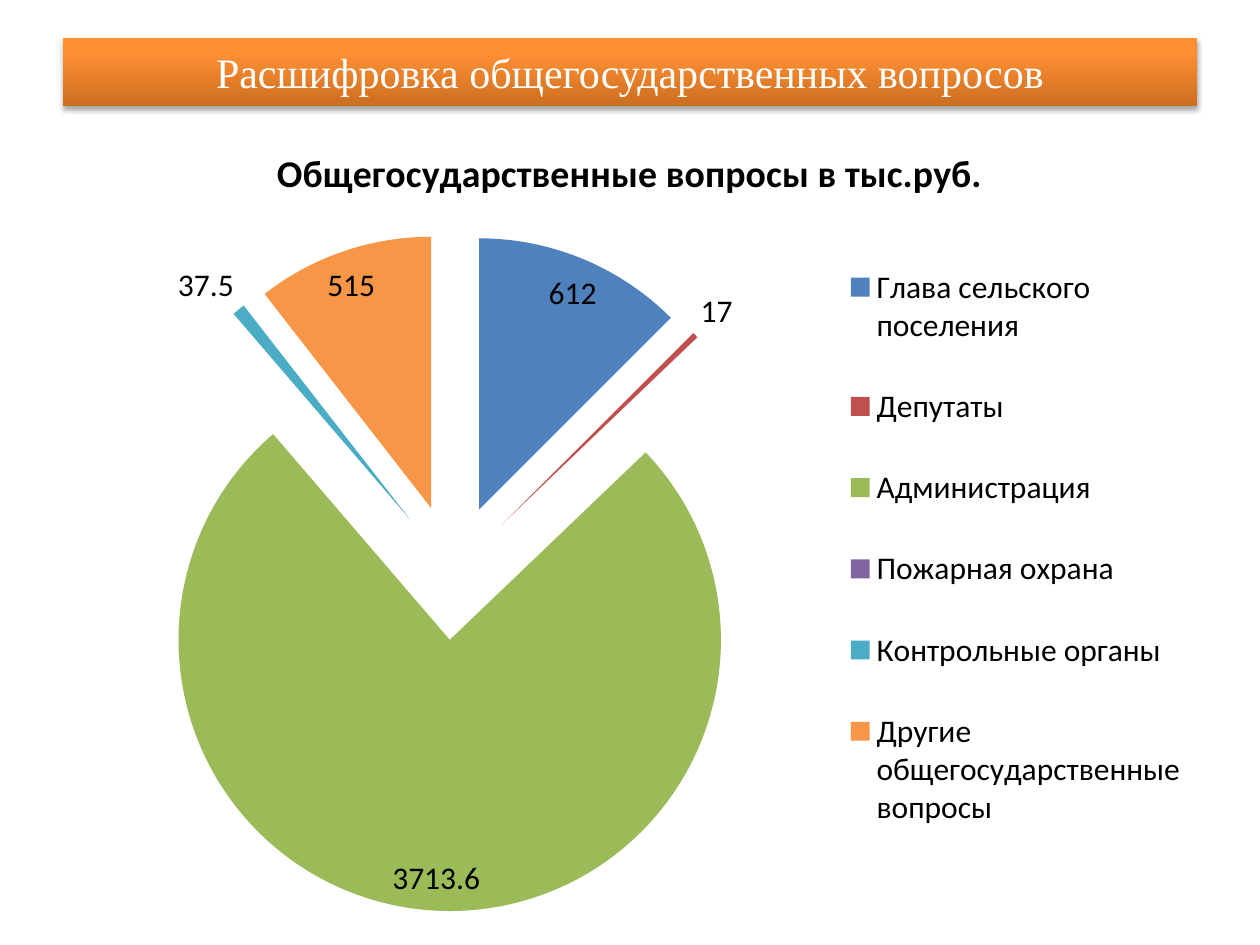
from lxml import etree
from pptx import Presentation
from pptx.chart.data import CategoryChartData
from pptx.dml.color import RGBColor
from pptx.enum.chart import XL_CHART_TYPE, XL_LABEL_POSITION, XL_LEGEND_POSITION
from pptx.enum.shapes import MSO_SHAPE
from pptx.enum.text import MSO_ANCHOR, PP_ALIGN
from pptx.oxml import parse_xml
from pptx.oxml.ns import nsdecls, qn
from pptx.util import Pt

PX = 914400 // 126
COLORS = {"dark": "CC6E20", "light": "FF9034", "white": "FFFFFF", "black": "000000"}
HEAD = "Общегосударственные вопросы в тыс.руб."
PARTS = [
    ("Глава сельского поселения", 612, "4F81BD"),
    ("Депутаты", 17, "C0504D"),
    ("Администрация", 3713.6, "9BBB59"),
    ("Пожарная охрана", 0, "8064A2"),
    ("Контрольные органы", 37.5, "4BACC6"),
    ("Другие общегосударственные вопросы", 515, "F79646"),
]
CHART = (63, 116, 1134, 814)
PIE = (114, 233, 678, 678)
KEYS = (840, 225, 352, 645)


def rgb(code):
    return RGBColor.from_string(code)


def scale(box):
    return [n * PX for n in box]


def style(font, size, color, name, bold=False):
    font.size, font.name, font.bold = Pt(size), name, bold
    font.color.rgb = rgb(color)


def add_shadow(shape):
    shape.shadow.inherit = False
    effects = shape._element.spPr.find(qn("a:effectLst"))
    effects.append(parse_xml(
        f'<a:outerShdw {nsdecls("a")} blurRad="39370" dist="22860" dir="5400000" '
        'rotWithShape="0"><a:srgbClr val="000000"><a:alpha val="35000"/>'
        '</a:srgbClr></a:outerShdw>'))


def add_banner(slide, box, text):
    shape = slide.shapes.add_shape(MSO_SHAPE.RECTANGLE, *scale(box))
    shape.line.fill.background()
    shape.fill.gradient()
    shape.fill.gradient_angle = 90
    for stop, color, place in zip(shape.fill.gradient_stops, ("dark", "light"), (0, 0.8)):
        stop.color.rgb = rgb(COLORS[color])
        stop.position = place
    add_shadow(shape)
    frame = shape.text_frame
    frame.word_wrap = True
    frame.vertical_anchor = MSO_ANCHOR.MIDDLE
    para = frame.paragraphs[0]
    para.text = text
    para.alignment = PP_ALIGN.CENTER
    style(para.font, 24, COLORS["white"], "Times New Roman")


def make_layout(box, inner=False):
    """Manual layout of a chart part, as shares of the chart box."""
    left, top, wide, high = CHART
    x, y, w, h = box
    shares = {"x": (x - left) / wide, "y": (y - top) / high, "w": w / wide, "h": h / high}
    layout = parse_xml(f'<c:layout {nsdecls("c")}><c:manualLayout/></c:layout>')
    rules = [("layoutTarget", "inner")] if inner else []
    rules += [("xMode", "edge"), ("yMode", "edge")]
    rules += [(key, f"{share:.3f}") for key, share in shares.items()]
    for tag, val in rules:
        etree.SubElement(layout[0], qn("c:" + tag)).set("val", val)
    return layout


def add_pie(slide):
    data = CategoryChartData()
    data.categories = [name for name, _, _ in PARTS]
    data.add_series(HEAD, [value for _, value, _ in PARTS])
    chart = slide.shapes.add_chart(XL_CHART_TYPE.PIE, *scale(CHART), data).chart
    style(chart.font, 18, COLORS["black"], "Calibri")

    # Heading
    chart.has_title = True
    para = chart.chart_title.text_frame.paragraphs[0]
    para.text = HEAD
    style(para.font, 21.6, COLORS["black"], "Calibri", True)

    # Slices, pulled apart
    plot = chart.plots[0]
    plot.vary_by_categories = True
    series = plot.series[0]
    for i, (_, _, color) in enumerate(PARTS):
        fill = series.points[i].format.fill
        fill.solid()
        fill.fore_color.rgb = rgb(color)
    burst = parse_xml(f'<c:explosion {nsdecls("c")} val="25"/>')
    series._element.find(qn("c:dPt")).addprevious(burst)

    # Values, with zero left blank
    plot.has_data_labels = True
    labels = plot.data_labels
    labels.show_value = True
    labels.show_percentage = False
    labels.number_format = "General;;"
    labels.number_format_is_linked = False
    labels.position = XL_LABEL_POSITION.BEST_FIT

    # Legend and places
    chart.has_legend = True
    legend = chart.legend
    legend.position = XL_LEGEND_POSITION.RIGHT
    legend.include_in_layout = False
    for old in legend._element.findall(qn("c:layout")):
        legend._element.remove(old)
    legend._element.find(qn("c:legendPos")).addnext(make_layout(KEYS))
    area = chart._chartSpace.chart.plotArea
    for old in area.findall(qn("c:layout")):
        area.remove(old)
    area.insert(0, make_layout(PIE, True))


def main():
    deck = Presentation()
    deck.slide_width, deck.slide_height = 1260 * PX, 945 * PX
    slide = deck.slides.add_slide(deck.slide_layouts[6])
    add_banner(slide, (63, 38, 1134, 68), "Расшифровка общегосударственных вопросов")
    add_pie(slide)
    deck.save("out.pptx")


if __name__ == "__main__":
    main()
